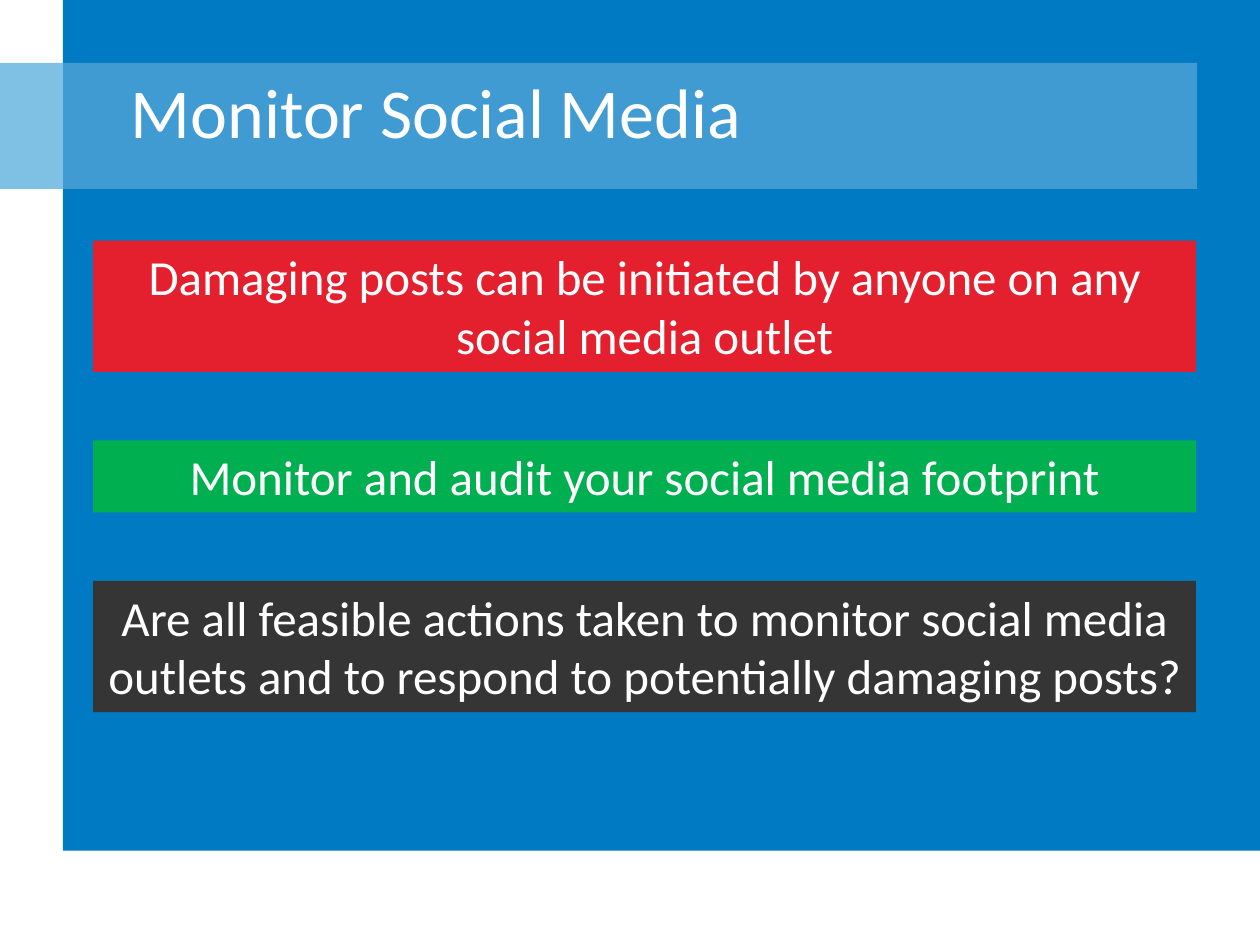
import pptx
import pptx.dml.color
import pptx.enum.shapes
import pptx.enum.text
import pptx.util

Cm = pptx.util.Cm
ALIGN = pptx.enum.text.PP_ALIGN
ANCHOR = pptx.enum.text.MSO_ANCHOR

COLORS = {
    "panel": "007AC3",
    "title_band": "409BD2",
    "title_tab": "7FC1E4",
    "risk": "E5202E",
    "action": "00B050",
    "question": "353535",
    "text": "FFFFFF",
}
TEXT_FONT = {"name": "Calibri", "bold": False}

BANNER_LEFT, BANNER_TOP, BANNER_WIDTH, BANNER_GAP = 1.88, 4.85, 22.23, 1.38
BANNERS = [
    ("risk", 2.65, "Damaging posts can be initiated by anyone on any social media outlet"),
    ("action", 1.45, "Monitor and audit your social media footprint"),
    ("question", 2.65, "Are all feasible actions taken to monitor social media outlets "
                       "and to respond to potentially damaging posts?"),
]


def rgb(name):
    return pptx.dml.color.RGBColor.from_string(COLORS[name])


def add_rect(s, color, left, top, width, height):
    sp = s.shapes.add_shape(pptx.enum.shapes.MSO_SHAPE.RECTANGLE,
                            Cm(left), Cm(top), Cm(width), Cm(height))
    sp.shadow.inherit = False
    sp.fill.solid()
    sp.fill.fore_color.rgb = rgb(color)
    sp.line.fill.background()
    return sp


def set_text(sp, text, size, align, anchor):
    tf = sp.text_frame
    tf.word_wrap = True
    tf.vertical_anchor = anchor
    p = tf.paragraphs[0]
    p.alignment = align
    r = p.add_run()
    r.text = text
    for key, value in {**TEXT_FONT, "size": pptx.util.Pt(size)}.items():
        setattr(r.font, key, value)
    r.font.color.rgb = rgb("text")


def add_title(s, text):
    sp = s.shapes.add_textbox(Cm(2.39), Cm(0.64), Cm(21.2), Cm(3.18))
    set_text(sp, text, 40, ALIGN.LEFT, ANCHOR.MIDDLE)


def add_banners(s):
    """Stack the banners downwards with an equal gap between them."""
    top = BANNER_TOP
    for color, height, text in BANNERS:
        sp = add_rect(s, color, BANNER_LEFT, top, BANNER_WIDTH, height)
        set_text(sp, text, 28, ALIGN.CENTER, ANCHOR.TOP)
        sp.text_frame.auto_size = pptx.enum.text.MSO_AUTO_SIZE.SHAPE_TO_FIT_TEXT
        top += height + BANNER_GAP


def main():
    prs = pptx.Presentation()
    prs.slide_width, prs.slide_height = Cm(25.4), Cm(19.05)
    s = prs.slides.add_slide(prs.slide_layouts[6])
    add_rect(s, "panel", 1.27, 0, 24.13, 17.15)
    add_rect(s, "title_band", 1.27, 1.27, 22.86, 2.54)
    add_rect(s, "title_tab", 0, 1.27, 1.27, 2.54)
    add_title(s, "Monitor Social Media")
    add_banners(s)
    prs.save("out.pptx")


if __name__ == "__main__":
    main()
